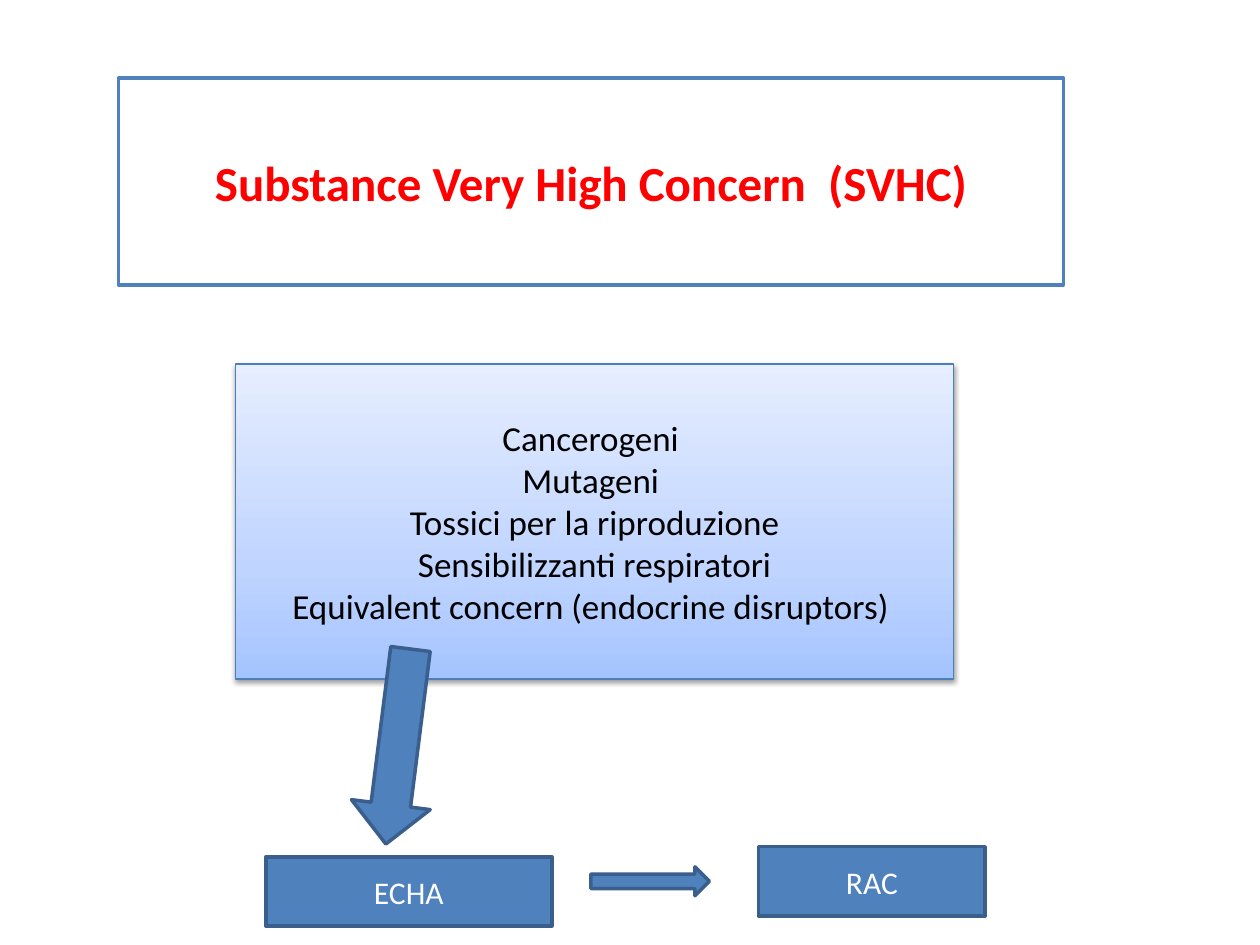
from pptx import Presentation
from pptx.dml.color import RGBColor
from pptx.enum.shapes import MSO_SHAPE as SHAPE
from pptx.enum.text import MSO_ANCHOR as ANCHOR, PP_ALIGN as ALIGN
from pptx.oxml import parse_xml
from pptx.oxml.ns import nsdecls, qn
from pptx.util import Pt

PX = 9144
FONT = "Calibri"
WHITE = RGBColor(0xFF, 0xFF, 0xFF)
BLACK = RGBColor(0x00, 0x00, 0x00)
RED = RGBColor(0xFF, 0x00, 0x00)
BLUE = RGBColor(0x4F, 0x81, 0xBD)
DARK_BLUE = RGBColor(0x3A, 0x5F, 0x8C)
EDGE_BLUE = RGBColor(0x4B, 0x7E, 0xBC)
GRADIENT = [
    (0, RGBColor(0xA4, 0xC4, 0xFF)),
    (35, RGBColor(0xBF, 0xD4, 0xFF)),
    (100, RGBColor(0xE6, 0xEE, 0xFF)),
]
CONCERNS = [
    "Cancerogeni ",
    "Mutageni ",
    "Tossici per la riproduzione",
    "Sensibilizzanti respiratori",
    "Equivalent concern (endocrine disruptors) ",
]


def emu(*lengths):
    """Turn px lengths into EMU."""
    return [n * PX for n in lengths]


def paint(sp, fill, line, width):
    """Give a shape a solid fill and an outline."""
    sp.fill.solid()
    sp.fill.fore_color.rgb = fill
    sp.line.color.rgb = line
    sp.line.width = Pt(width)


def write(sp, lines, size, color, bold=False):
    """Write centred lines into a shape, one paragraph each."""
    tf = sp.text_frame
    tf.word_wrap = True
    tf.vertical_anchor = ANCHOR.MIDDLE
    for i, text in enumerate(lines):
        p = tf.add_paragraph() if i else tf.paragraphs[0]
        p.alignment = ALIGN.CENTER
        r = p.add_run()
        r.text = text
        r.font.name = FONT
        r.font.size = Pt(size)
        r.font.bold = bold
        r.font.color.rgb = color


def add_title(slide, text, box):
    """Place the title in an outlined box."""
    sp = slide.shapes.title
    sp.left, sp.top, sp.width, sp.height = emu(*box)
    paint(sp, WHITE, BLUE, 2)
    write(sp, [text], 28, RED, bold=True)


def add_block(slide, kind, box, rotation=0):
    """Add a flat blue shape and return it."""
    sp = slide.shapes.add_shape(kind, *emu(*box))
    sp.rotation = rotation
    sp.shadow.inherit = False
    paint(sp, BLUE, DARK_BLUE, 2)
    return sp


def add_panel(slide, lines, box):
    """Add the gradient panel with its soft shadow."""
    sp = add_block(slide, SHAPE.RECTANGLE, box)
    sp.line.color.rgb = EDGE_BLUE
    sp.line.width = Pt(0.75)
    sp.fill.gradient()
    sp.fill.gradient_angle = 90
    stops = "".join(
        f'<a:gs pos="{pos * 1000}"><a:srgbClr val="{color}"/></a:gs>'
        for pos, color in GRADIENT
    )
    props = sp._element.spPr
    old = props.find(".//" + qn("a:gsLst"))
    new = parse_xml(f'<a:gsLst {nsdecls("a")}>{stops}</a:gsLst>')
    old.getparent().replace(old, new)
    props.find(qn("a:effectLst")).append(parse_xml(
        f'<a:outerShdw {nsdecls("a")} blurRad="{Pt(3.1)}" dist="{Pt(1.6)}" '
        'dir="5400000" rotWithShape="0"><a:srgbClr val="000000">'
        '<a:alpha val="38000"/></a:srgbClr></a:outerShdw>'
    ))
    write(sp, lines, 20, BLACK)


def add_body(slide, name, box):
    """Add a labelled box for one of the bodies involved."""
    write(add_block(slide, SHAPE.RECTANGLE, box), [name], 18, WHITE)


def main():
    """Build the slide and save it."""
    prs = Presentation()
    prs.slide_width, prs.slide_height = emu(1000, 750)
    slide = prs.slides.add_slide(prs.slide_layouts[5])
    add_title(slide, "Substance Very High Concern  (SVHC)", (94, 62, 750, 164))
    add_panel(slide, CONCERNS, (187, 289, 570, 250))
    add_block(slide, SHAPE.RIGHT_ARROW, (238, 561, 156, 63), rotation=97.2)
    add_body(slide, "ECHA", (211, 680, 227, 55))
    add_body(slide, "RAC", (602, 672, 180, 55))
    add_block(slide, SHAPE.RIGHT_ARROW, (469, 688, 94, 23))
    prs.save("out.pptx")


if __name__ == "__main__":
    main()
